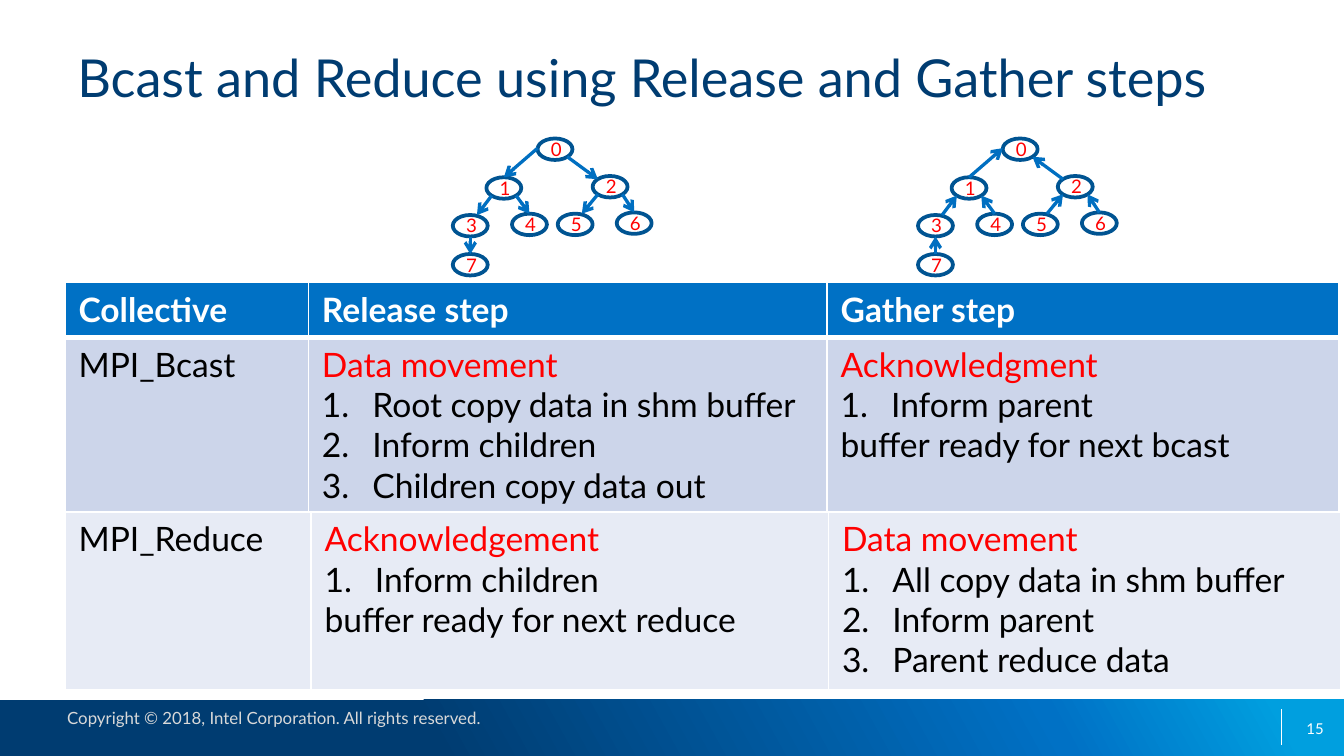
from typing import NamedTuple

from lxml import etree
from pptx import Presentation
from pptx.dml.color import RGBColor
from pptx.enum.shapes import MSO_CONNECTOR, MSO_SHAPE
from pptx.enum.text import MSO_ANCHOR, PP_ALIGN
from pptx.oxml import parse_xml
from pptx.oxml.ns import qn
from pptx.util import Pt

STRAIGHT = MSO_CONNECTOR.STRAIGHT
OVAL, RECTANGLE = MSO_SHAPE.OVAL, MSO_SHAPE.RECTANGLE
LEFT, RIGHT = PP_ALIGN.LEFT, PP_ALIGN.RIGHT
TOP, MIDDLE = MSO_ANCHOR.TOP, MSO_ANCHOR.MIDDLE
DRAWING = "http://schemas.openxmlformats.org/drawingml/2006/main"
FONT = "Lato"
NAVY, BLUE, SKY = "003C71", "0071C5", "009FDF"
WHITE, BLACK, RED = "FFFFFF", "000000", "FF0000"
RING, ARROW = "005492", "006FC1"
NODE_WIDTH, NODE_HEIGHT = 18.72, 11.52
LABEL_SIZE, LABEL_RISE = 19.4, 3.9
NUMBER_INDENT = 27


class Node(NamedTuple):
    x: float
    y: float


class Edge(NamedTuple):
    parent: int
    leave: tuple[float, float]
    child: int
    enter: tuple[float, float]


class Line(NamedTuple):
    text: str
    color: str = BLACK
    bold: bool = False
    numbered: bool = False


class Row(NamedTuple):
    height: float
    fill: str
    top: float
    bottom: float
    cells: list[list[Line]]


NODES = [
    Node(45.4, 74.2), Node(18, 95), Node(74.9, 94.3), Node(0, 115.2),
    Node(31.7, 114.5), Node(56.2, 114.5), Node(87.8, 113.8), Node(0, 136.1),
]
LOWER_LEFT, LOWER_RIGHT = (0.15, 0.85), (0.85, 0.85)
TOP_CENTER, UPPER_RIGHT = (0.5, 0), (0.69, 0)
EDGES = [
    Edge(0, (0, 0.45), 1, TOP_CENTER),
    Edge(0, LOWER_RIGHT, 2, (0.15, 0.15)),
    Edge(1, LOWER_LEFT, 3, UPPER_RIGHT),
    Edge(1, LOWER_RIGHT, 4, TOP_CENTER),
    Edge(2, LOWER_LEFT, 5, UPPER_RIGHT),
    Edge(2, LOWER_RIGHT, 6, TOP_CENTER),
    Edge(3, (0.5, 1), 7, TOP_CENTER),
]


def numbered(text: str) -> Line:
    return Line(text, numbered=True)


HEADER = Row(29.5, BLUE, 1, 3, [
    [Line(name, WHITE, True)]
    for name in ("Collective", "Release step", "Gather step")
])
BCAST = Row(93.6, "CCD5EA", 3, 1, [
    [Line("MPI_Bcast")],
    [Line("Data movement", RED), numbered("Root copy data in shm buffer"),
     numbered("Inform children"), numbered("Children copy data out")],
    [Line("Acknowledgment", RED), numbered("Inform parent"),
     Line("buffer ready for next bcast")],
])
REDUCE = Row(95, "E7EBF5", 1, 1, [
    [Line("MPI_Reduce")],
    [Line("Acknowledgement", RED), numbered("Inform children"),
     Line("buffer ready for next reduce")],
    [Line("Data movement", RED), numbered("All copy data in shm buffer"),
     numbered("Inform parent"), numbered("Parent reduce data")],
])


def rgb(value: str) -> RGBColor:
    return RGBColor.from_string(value)


def style(paragraph, size: float, color: str, bold: bool = False) -> None:
    font = paragraph.font
    font.name, font.size, font.bold = FONT, Pt(size), bold
    font.color.rgb = rgb(color)


def add_text(shapes, text: str, left: float, top: float, width: float,
             height: float, size: float, color: str, align=LEFT, anchor=TOP,
             margin: tuple[float, float] = (0, 0), wrap: bool = True) -> None:
    box = shapes.add_textbox(Pt(left), Pt(top), Pt(width), Pt(height))
    frame = box.text_frame
    frame.word_wrap, frame.vertical_anchor = wrap, anchor
    frame.margin_left = frame.margin_right = Pt(margin[0])
    frame.margin_top = frame.margin_bottom = Pt(margin[1])
    paragraph = frame.paragraphs[0]
    paragraph.text, paragraph.alignment = text, align
    style(paragraph, size, color)


def add_line(shapes, start: tuple[float, float], end: tuple[float, float],
             color: str, width: float, arrow: bool = False) -> None:
    points = [Pt(value) for value in (*start, *end)]
    connector = shapes.add_connector(STRAIGHT, *points)
    connector.line.color.rgb, connector.line.width = rgb(color), Pt(width)
    properties = connector._element.spPr
    if arrow:
        outline = properties.find(qn("a:ln"))
        etree.SubElement(outline, qn("a:tailEnd"), type="arrow")
    etree.SubElement(properties, qn("a:effectLst"))


def add_tree(page, left: float, upward: bool) -> None:
    shapes = page.shapes.add_group_shape().shapes

    def site(index: int, share: tuple[float, float]) -> tuple[float, float]:
        node = NODES[index]
        return (left + node.x + share[0] * NODE_WIDTH,
                node.y + share[1] * NODE_HEIGHT)

    for number, node in enumerate(NODES):
        x = left + node.x
        oval = shapes.add_shape(OVAL, Pt(x), Pt(node.y),
                                Pt(NODE_WIDTH), Pt(NODE_HEIGHT))
        oval.shadow.inherit = False
        oval.fill.background()
        oval.line.color.rgb, oval.line.width = rgb(RING), Pt(2)
        add_text(shapes, str(number), x, node.y - LABEL_RISE, LABEL_SIZE,
                 LABEL_SIZE, 10, RED, margin=(7.2, 3.6), wrap=False)
    for edge in EDGES:
        ends = [site(edge.parent, edge.leave), site(edge.child, edge.enter)]
        if upward:
            ends.reverse()
        add_line(shapes, *ends, ARROW, 1.75, arrow=True)


def fill_cell(cell, lines: list[Line], row: Row) -> None:
    frame = cell.text_frame
    frame.text = "\n".join(line.text for line in lines)
    for paragraph, line in zip(frame.paragraphs, lines):
        if line.numbered:
            properties = paragraph._p.get_or_add_pPr()
            properties.set("marL", str(Pt(NUMBER_INDENT)))
            properties.set("indent", str(-Pt(NUMBER_INDENT)))
            etree.SubElement(properties, qn("a:buAutoNum"), type="arabicPeriod")
        style(paragraph, 18, line.color, line.bold)
    borders = {"L": 1, "R": 1, "T": row.top, "B": row.bottom}
    for side, width in borders.items():
        border = etree.SubElement(cell._tc.get_or_add_tcPr(),
                                  qn(f"a:ln{side}"), w=str(Pt(width)))
        solid = etree.SubElement(border, qn("a:solidFill"))
        etree.SubElement(solid, qn("a:srgbClr"), val=WHITE)
    cell.fill.solid()
    cell.fill.fore_color.rgb = rgb(row.fill)


def add_grid(page, top: float, widths: list[float], rows: list[Row]) -> None:
    height = sum(row.height for row in rows)
    table = page.shapes.add_table(len(rows), len(widths), Pt(34.9), Pt(top),
                                  Pt(sum(widths)), Pt(height)).table
    table.first_row = table.horz_banding = False
    for column, width in zip(table.columns, widths):
        column.width = Pt(width)
    for index, row in enumerate(rows):
        table.rows[index].height = Pt(row.height)
        for position, lines in enumerate(row.cells):
            fill_cell(table.cell(index, position), lines, row)


def add_footer(page) -> None:
    band = page.shapes.add_shape(RECTANGLE, 0, Pt(375), Pt(720), Pt(30))
    band.shadow.inherit = False
    band.line.fill.background()
    stops = "".join(
        f'<a:gs pos="{share * 1000}"><a:srgbClr val="{color}"/></a:gs>'
        for share, color in ((32, NAVY), (78, BLUE), (95, SKY)))
    gradient = parse_xml(
        f'<a:gradFill xmlns:a="{DRAWING}"><a:gsLst>{stops}</a:gsLst>'
        f'<a:lin ang="{331 * 60000}" scaled="0"/></a:gradFill>')
    band._element.spPr.find(qn("a:prstGeom")).addnext(gradient)
    add_line(page.shapes, (686.5, 380), (686.5, 399), WHITE, 0.75)
    add_text(page.shapes,
             "Copyright © 2018, Intel Corporation. All rights reserved.",
             36, 379.4, 231.8, 10.8, 9, "D9D9D9")
    add_text(page.shapes, "15", 686.9, 379.4, 22.3, 21.6, 8, WHITE,
             RIGHT, MIDDLE)


def main() -> None:
    deck = Presentation()
    deck.slide_width, deck.slide_height = Pt(720), Pt(405)
    page = deck.slides.add_slide(deck.slide_layouts[6])
    add_footer(page)
    add_text(page.shapes, "Bcast and Reduce using Release and Gather steps",
             36, 24.5, 679, 68.4, 28, NAVY, margin=(5.4, 0))
    add_grid(page, 151.2, [130.4, 277.9, 274.3], [HEADER, BCAST])
    add_tree(page, 491.8, upward=True)
    add_tree(page, 242.6, upward=False)
    add_grid(page, 274.3, [131.8, 277.2, 274.3], [REDUCE])
    deck.save("out.pptx")


if __name__ == "__main__":
    main()
